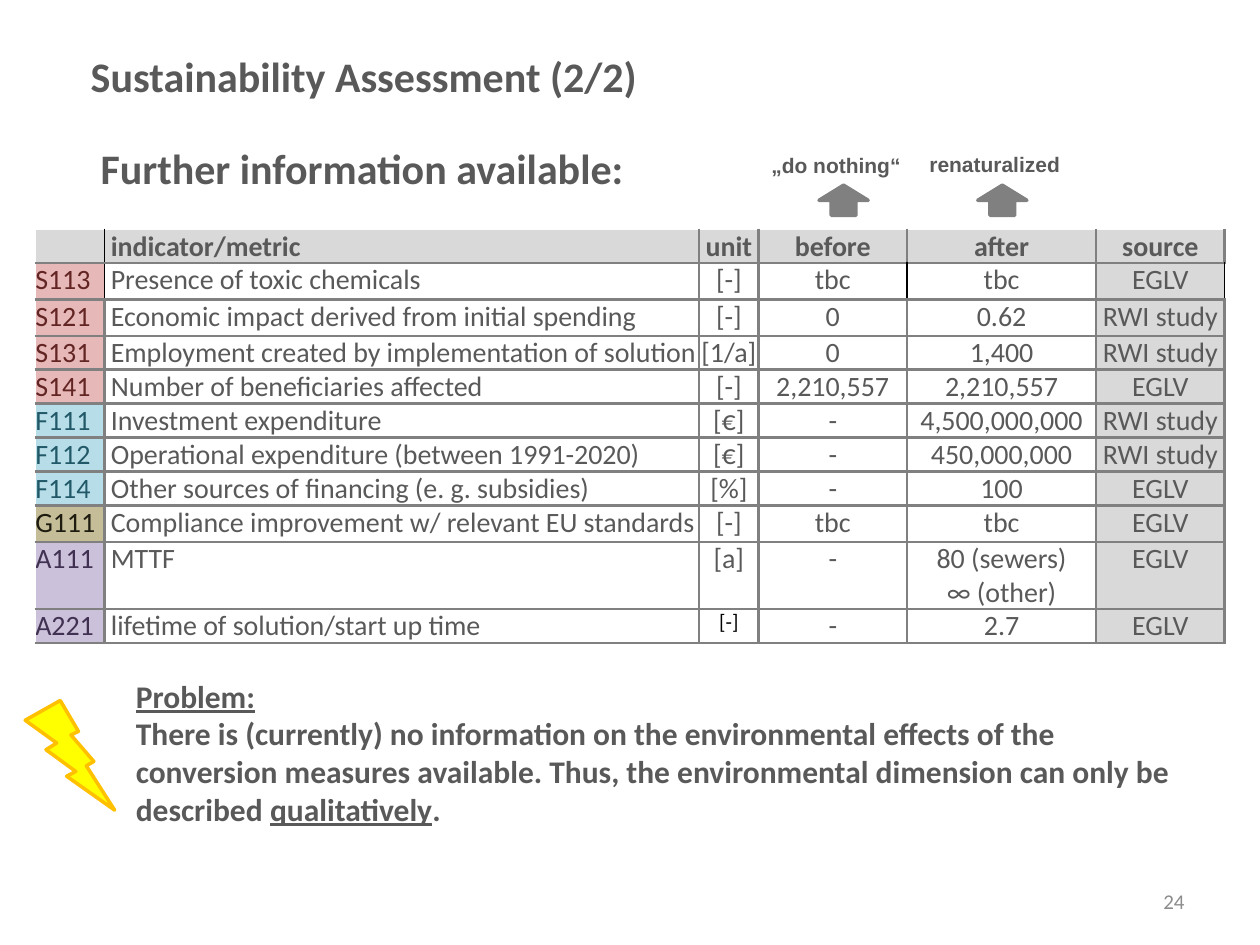
from lxml.etree import SubElement
from pptx import Presentation
from pptx.dml.color import RGBColor
from pptx.enum.shapes import MSO_SHAPE
from pptx.enum.text import MSO_ANCHOR, PP_ALIGN
from pptx.oxml.ns import qn
from pptx.util import Inches, Pt

TEXT = RGBColor(0x59, 0x59, 0x59)
GREY = RGBColor(0x80, 0x80, 0x80)
PALE = RGBColor(0xD9, 0xD9, 0xD9)
MUTED = RGBColor(0x8C, 0x8C, 0x8C)
WHITE = RGBColor(0xFF, 0xFF, 0xFF)
BLACK = RGBColor(0x00, 0x00, 0x00)
YELLOW = RGBColor(0xFF, 0xFF, 0x00)
AMBER = RGBColor(0xFF, 0xC0, 0x00)
GROUPS = {
    "S": (RGBColor(0xE6, 0xB9, 0xB8), RGBColor(0x63, 0x25, 0x23)),
    "F": (RGBColor(0xB7, 0xDE, 0xE8), RGBColor(0x21, 0x59, 0x68)),
    "G": (RGBColor(0xC4, 0xBD, 0x97), RGBColor(0x1E, 0x1C, 0x11)),
    "A": (RGBColor(0xCC, 0xC1, 0xDA), RGBColor(0x40, 0x31, 0x52)),
}
WIDTHS = [0.55, 4.72, 0.47, 1.18, 1.5, 1.02]
HEIGHTS = [0.26, 0.29, 0.29, 0.26, 0.27, 0.27, 0.27, 0.27, 0.29, 0.53, 0.27]
ROWS = [
    ("", "indicator/metric", "unit", "before", "after", "source"),
    ("S113", "Presence of toxic chemicals", "[-]", "tbc", "tbc", "EGLV"),
    ("S121", "Economic impact derived from initial spending", "[-]", "0", "0.62", "RWI study"),
    ("S131", "Employment created by implementation of solution", "[1/a]", "0", "1,400", "RWI study"),
    ("S141", "Number of beneficiaries affected", "[-]", "2,210,557", "2,210,557", "EGLV"),
    ("F111", "Investment expenditure", "[€]", "-", "4,500,000,000", "RWI study"),
    ("F112", "Operational expenditure (between 1991-2020)", "[€]", "-", "450,000,000", "RWI study"),
    ("F114", "Other sources of financing (e. g. subsidies)", "[%]", "-", "100", "EGLV"),
    ("G111", "Compliance improvement w/ relevant EU standards", "[-]", "tbc", "tbc", "EGLV"),
    ("A111", "MTTF", "[a]", "-", "80 (sewers)\n∞ (other)", "EGLV"),
    ("A221", "lifetime of solution/start up time", "[-]", "-", "2.7", "EGLV"),
]
DARK = {(0, 0, "R"), (0, 1, "L"), (1, 0, "R"), (1, 1, "L"),
        (1, 3, "R"), (1, 4, "L"), (1, 5, "R")}


def style(frame, size, color=TEXT, bold=True, align=PP_ALIGN.LEFT, face="Calibri"):
    """Format every run of a text frame."""
    for para in frame.paragraphs:
        para.alignment = align
        for run in para.runs:
            font = run.font
            font.name, font.size, font.bold = face, Pt(size), bold
            font.color.rgb = color


def add_text(slide, box, text, size, **look):
    """Add a wrapping text box and return its frame."""
    frame = slide.shapes.add_textbox(*map(Inches, box)).text_frame
    frame.word_wrap = True
    frame.text = text
    style(frame, size, **look)
    return frame


def add_title(slide, text):
    """Place and fill the title placeholder."""
    title = slide.shapes.title
    title.left, title.top = Inches(0.62), Inches(0.35)
    title.width, title.height = Inches(6.86), Inches(0.5)
    title.text_frame.text = text
    title.text_frame.vertical_anchor = MSO_ANCHOR.TOP
    style(title.text_frame, 24)


def add_icon(slide, kind, box, fill, line):
    """Add a filled and outlined preset shape."""
    icon = slide.shapes.add_shape(kind, *map(Inches, box))
    icon.shadow.inherit = False
    icon.fill.solid()
    icon.fill.fore_color.rgb = fill
    icon.line.color.rgb = line
    icon.line.width = Pt(2)


def edge(cell, side, color, width):
    """Draw one border of a cell."""
    props = cell._tc.get_or_add_tcPr()
    line = SubElement(props, qn(f"a:ln{side}"), w=str(Pt(width)))
    fill = SubElement(line, qn("a:solidFill"))
    SubElement(fill, qn("a:srgbClr"), val=str(color))


def frame_cell(cell, row, col):
    """Draw the four borders of a cell."""
    for side in "LRTB":
        if (row, col, side) in DARK:
            edge(cell, side, BLACK, 1)
        elif (col == 0 and side == "L") or (row == 0 and side == "T"):
            edge(cell, side, WHITE, 1)
        else:
            edge(cell, side, GREY, 1.5)


def fill_cell(cell, row, col, text):
    """Write and colour one cell."""
    cell.margin_left = Inches(0.05 if col == 1 else 0)
    cell.margin_right = cell.margin_top = cell.margin_bottom = 0
    frame_cell(cell, row, col)
    shade, color, size = None, TEXT, 16
    if row == 0 or col == 5:
        shade = PALE
    elif col == 0:
        shade, color = GROUPS[text[0]]
    elif (row, col) == (len(ROWS) - 1, 2):
        color, size = BLACK, 12
    if shade is None:
        cell.fill.background()
    else:
        cell.fill.solid()
        cell.fill.fore_color.rgb = shade
    cell.text_frame.text = text
    if not text:
        SubElement(cell.text_frame.paragraphs[0]._p, qn("a:endParaRPr"), sz="1600")
    align = PP_ALIGN.CENTER if col > 1 else PP_ALIGN.LEFT
    style(cell.text_frame, size, color, row == 0, align)


def add_grid(slide):
    """Add the table of indicators."""
    box = (0.28, 1.82, sum(WIDTHS), sum(HEIGHTS))
    table = slide.shapes.add_table(len(ROWS), len(WIDTHS), *map(Inches, box)).table
    table.horz_banding = False
    for col, width in zip(table.columns, WIDTHS):
        col.width = Inches(width)
    for row, height in zip(table.rows, HEIGHTS):
        row.height = Inches(height)
    for row, texts in enumerate(ROWS):
        for col, text in enumerate(texts):
            fill_cell(table.cell(row, col), row, col, text)


def add_note(slide):
    """Add the problem statement with its underlined words."""
    frame = add_text(slide, (0.98, 5.32, 8.43, 1.31), "Problem:", 18)
    frame.paragraphs[0].runs[0].font.underline = True
    para = frame.add_paragraph()
    for text in ("There is (currently) no information on the environmental effects of the "
                 "conversion measures available. Thus, the environmental dimension can only "
                 "be described ", "qualitatively", "."):
        run = para.add_run()
        run.text = text
        run.font.underline = text == "qualitatively"
    style(frame, 18)


def main():
    """Build and save the slide."""
    deck = Presentation()
    deck.slide_width, deck.slide_height = Inches(10), Inches(7.5)
    slide = deck.slides.add_slide(deck.slide_layouts[5])
    add_title(slide, "Sustainability Assessment (2/2)")
    add_text(slide, (0.7, 1.08, 8.71, 0.5), "Further information available:", 24)
    add_grid(slide)
    for text, left, top, tip in (("„do nothing“", 5.69, 1.16, 6.5),
                                 ("renaturalized", 6.95, 1.15, 7.76)):
        add_text(slide, (left, top, 1.89, 0.3), text, 12,
                 align=PP_ALIGN.CENTER, face="Arial")
        add_icon(slide, MSO_SHAPE.UP_ARROW, (tip, 1.47, 0.39, 0.24), GREY, GREY)
    add_note(slide)
    add_icon(slide, MSO_SHAPE.LIGHTNING_BOLT, (0.2, 5.56, 0.71, 0.87), YELLOW, AMBER)
    page = add_text(slide, (7.17, 6.95, 2.33, 0.4), "24", 12,
                    color=MUTED, bold=False, align=PP_ALIGN.RIGHT)
    page.vertical_anchor = MSO_ANCHOR.MIDDLE
    deck.save("out.pptx")


if __name__ == "__main__":
    main()
